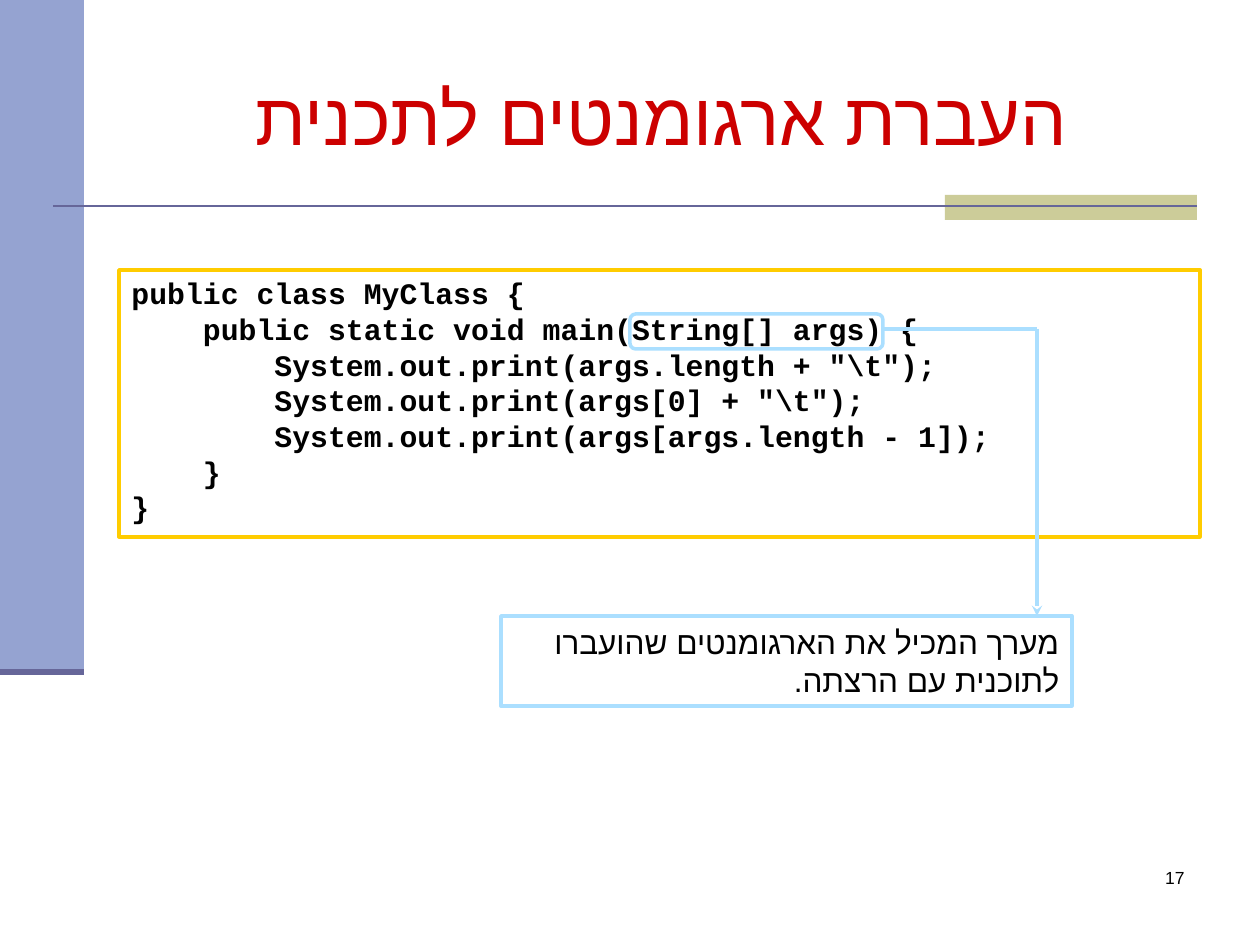
from lxml import etree
from pptx import Presentation
from pptx import util as u
from pptx.dml.color import RGBColor
from pptx.enum import shapes, text
from pptx.oxml.ns import qn

PX = 914400 // 126
COLORS = {
    "white": "FFFFFF", "black": "000000", "title": "CC0000",
    "band": "95A3D1", "accent": "CCCC99", "rule": "666699",
    "code": "FFCC00", "callout": "ABDFFF",
}
CODE = """public class MyClass {
    public static void main(String[] args) {
        System.out.print(args.length + "\\t");
        System.out.print(args[0] + "\\t");
        System.out.print(args[args.length - 1]);
    }
}"""


def color(name):
    return RGBColor.from_string(COLORS[name])


def px(*lengths):
    return [u.Emu(length * PX) for length in lengths]


def add_box(slide, box, fill=None, line=None, kind=shapes.MSO_SHAPE.RECTANGLE):
    shape = slide.shapes.add_shape(kind, *px(*box))
    shape.shadow.inherit = False
    if fill:
        shape.fill.solid()
        shape.fill.fore_color.rgb = color(fill)
    else:
        shape.fill.background()
    if line:
        shape.line.color.rgb = color(line)
        shape.line.width = u.Pt(2)
    else:
        shape.line.fill.background()
    return shape


def add_line(slide, ends, line, width, arrow=False):
    connector = slide.shapes.add_connector(shapes.MSO_CONNECTOR.STRAIGHT, *px(*ends))
    connector.line.color.rgb = color(line)
    connector.line.width = u.Pt(width)
    properties = connector._element.spPr
    if arrow:
        etree.SubElement(properties.find(qn("a:ln")), qn("a:tailEnd"), type="stealth")
    etree.SubElement(properties, qn("a:effectLst"))


def write(shape, content, font, align, anchor=text.MSO_ANCHOR.MIDDLE,
          ink="black", rtl=False, spacing=None):
    """Fill a shape with one paragraph per line of content."""
    frame = shape.text_frame
    frame.word_wrap = True
    frame.vertical_anchor = anchor
    frame.text = content
    for paragraph in frame.paragraphs:
        paragraph.alignment = align
        paragraph.line_spacing = spacing
        if rtl:
            paragraph._p.get_or_add_pPr().set("rtl", "1")
        for run in paragraph.runs:
            for name, value in font.items():
                setattr(run.font, name, value)
            run.font.color.rgb = color(ink)
            if rtl:
                etree.SubElement(run._r.get_or_add_rPr(), qn("a:cs"), typeface="Arial")


def add_decoration(slide):
    add_box(slide, (0, 0, 84, 672), "band")
    add_box(slide, (945, 195, 252, 25), "accent")
    add_line(slide, (53, 206, 1197, 206), "rule", 1.5)
    add_line(slide, (0, 672, 84, 672), "rule", 3.5)


def add_title(slide):
    title = slide.shapes.title
    title.left, title.top, title.width, title.height = px(126, 38, 1071, 157)
    write(title, "העברת ארגומנטים לתכנית", {"name": "Times New Roman", "size": u.Pt(42)},
          text.PP_ALIGN.CENTER, ink="title", rtl=True)


def add_page_number(slide):
    number = slide.shapes.add_textbox(*px(935, 861, 262, 63))
    write(number, "17", {"name": "Arial", "size": u.Pt(10)},
          text.PP_ALIGN.RIGHT, text.MSO_ANCHOR.TOP)


def add_code(slide):
    code = add_box(slide, (119, 270, 1081, 267), "white", "code")
    write(code, CODE, {"name": "Courier New", "size": u.Pt(17), "bold": True},
          text.PP_ALIGN.LEFT, text.MSO_ANCHOR.TOP, spacing=u.Pt(20.4))
    code.text_frame.margin_top, = px(5)


def add_callout(slide):
    """Frame the parameter and lead an arrow from it to its explanation."""
    add_box(slide, (630, 314, 253, 35), line="callout",
            kind=shapes.MSO_SHAPE.ROUNDED_RECTANGLE)
    note = add_box(slide, (501, 616, 571, 90), line="callout")
    write(note, "מערך המכיל את הארגומנטים שהועברו לתוכנית עם הרצתה.",
          {"name": "Arial", "size": u.Pt(18)}, text.PP_ALIGN.RIGHT, rtl=True)
    add_line(slide, (1037, 329, 1037, 616), "callout", 2, arrow=True)
    add_line(slide, (883, 329, 1037, 329), "callout", 2)


def main():
    presentation = Presentation()
    presentation.slide_width, presentation.slide_height = u.Inches(10), u.Inches(7.5)
    slide = presentation.slides.add_slide(presentation.slide_layouts[5])
    add_decoration(slide)
    add_title(slide)
    add_page_number(slide)
    add_code(slide)
    add_callout(slide)
    presentation.save("out.pptx")


if __name__ == "__main__":
    main()
